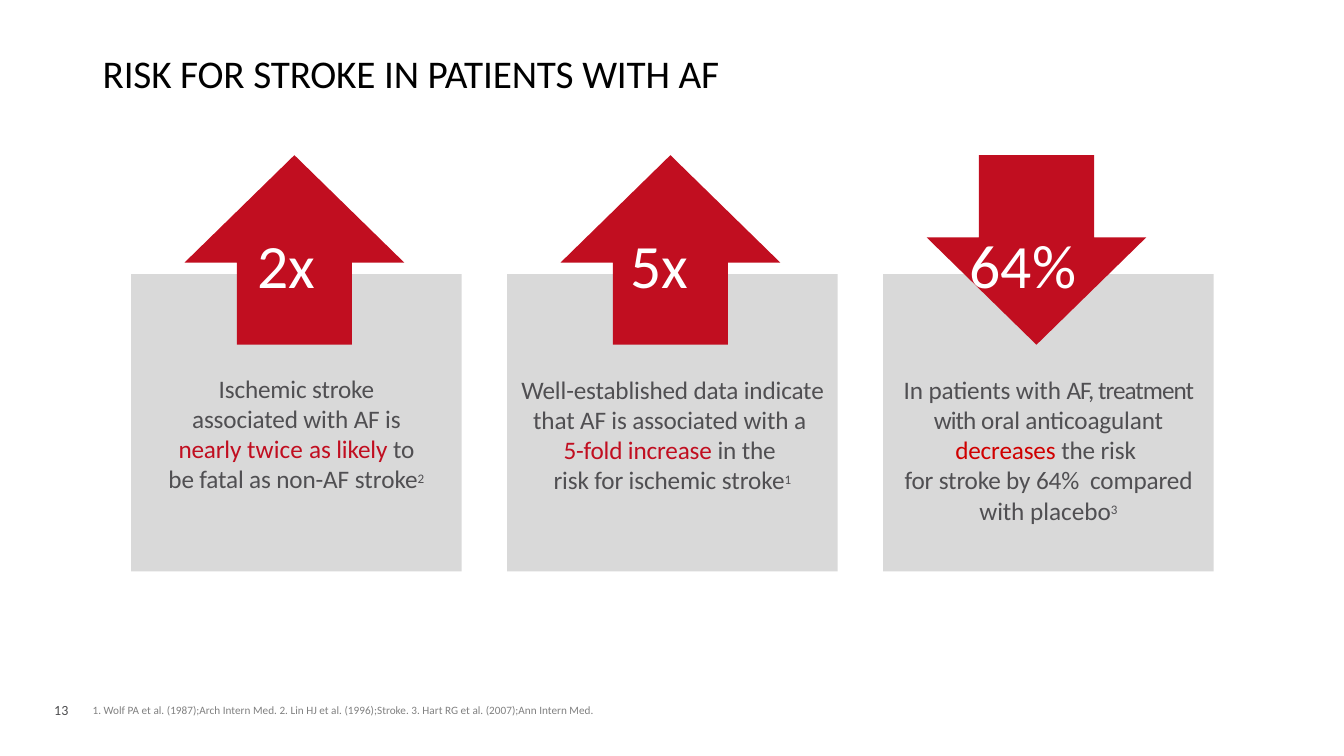
from pptx import Presentation
from pptx import util as u
from pptx.dml.color import RGBColor
from pptx.enum import shapes, text

WHITE = RGBColor(0xFF, 0xFF, 0xFF)
BLACK = RGBColor(0, 0, 0)
PANEL = RGBColor(0xD9, 0xD9, 0xD9)
RED = RGBColor(0xC1, 0x0E, 0x20)
BRIGHT_RED = RGBColor(0xD0, 0, 0)
BODY = RGBColor(0x50, 0x4F, 0x52)
NUMBER = RGBColor(0x4D, 0x4D, 0x4F)
NOTE = RGBColor(0x80, 0x80, 0x80)

# Horizontal rule of the three cards, in percent of the slide width
CARD_LEFT, CARD_PITCH, CARD_WIDTH = 9.75, 27.98, 24.6


def add_text(p, content, font="Calibri", size=18, color=BODY, spacing=0, raised=0):
    """Append text to a paragraph; a newline becomes a line break.

    Spacing is in points, raised in percent of the text size.
    """
    for i, line in enumerate(content.split("\n")):
        if i:
            p.add_line_break()
        if not line:
            continue
        r = p.add_run()
        r.text = line
        r.font.name = font
        r.font.size = u.Pt(size)
        r.font.color.rgb = color
        rPr = r._r.get_or_add_rPr()
        if spacing:
            rPr.set("spc", str(round(spacing * 100)))
        if raised:
            rPr.set("baseline", str(raised * 1000))


class Deck:
    """Holds the slide; every box is (left, top, width, height) in percent."""

    def __init__(self, width, height):
        self.prs = Presentation()
        self.prs.slide_width = u.Inches(width)
        self.prs.slide_height = u.Inches(height)
        self.slide = self.prs.slides.add_slide(self.prs.slide_layouts[6])

    def place(self, box):
        sizes = (self.prs.slide_width, self.prs.slide_height) * 2
        return [round(size * share / 100) for size, share in zip(sizes, box)]

    def shape(self, kind, box, fill):
        sp = self.slide.shapes.add_shape(kind, *self.place(box))
        sp.shadow.inherit = False
        sp.fill.solid()
        sp.fill.fore_color.rgb = fill
        sp.line.fill.background()
        return sp

    def textbox(self, box, runs, align=text.PP_ALIGN.LEFT, inset=True, wrap=True,
                anchor=text.MSO_ANCHOR.TOP, line_spacing=None):
        """Add a one-paragraph box; runs are (text, format) pairs."""
        tf = self.slide.shapes.add_textbox(*self.place(box)).text_frame
        tf.word_wrap = wrap
        tf.vertical_anchor = anchor
        if not inset:
            tf.margin_left = tf.margin_top = tf.margin_right = tf.margin_bottom = 0
        p = tf.paragraphs[0]
        p.alignment = align
        if line_spacing:
            p.line_spacing = line_spacing
        for content, fmt in runs:
            add_text(p, content, **fmt)

    def arrow(self, left, down):
        sp = self.shape(shapes.MSO_SHAPE.UP_ARROW, (left, 20.53, 16.35, 25.07), RED)
        sp.adjustments[0], sp.adjustments[1] = 0.524, 0.567
        sp.rotation = 180 if down else 0

    def card(self, column, figure, figure_shift, figure_width, arrow_shift, down,
             body_top, body_width, body):
        left = CARD_LEFT + column * CARD_PITCH
        self.shape(shapes.MSO_SHAPE.RECTANGLE, (left, 36.27, CARD_WIDTH, 39.33), PANEL)
        body_left = left + (CARD_WIDTH - body_width) / 2
        self.textbox((body_left, body_top, body_width, 20.13), body,
                     align=text.PP_ALIGN.CENTER, inset=False)
        self.arrow(left + arrow_shift, down)
        self.textbox((left + figure_shift, 30, figure_width, 9.87),
                     [(figure, dict(size=44, color=WHITE))], inset=False)


TIGHT = dict(spacing=-0.1)
TIGHT_RED = dict(color=RED, spacing=-0.1)
REFERENCE = dict(size=16, raised=26)

CARDS = [
    dict(figure="2x", figure_shift=9.38, figure_width=6.3, arrow_shift=3.98, down=False,
         body_top=49.33, body_width=19.58, body=[
             ("Ischemic stroke associated with AF is ", TIGHT),
             ("nearly ", TIGHT_RED),
             ("twice ", dict(color=RED, spacing=0.1)),
             ("as likely ", TIGHT_RED),
             ("to be fatal as non-AF ", TIGHT),
             ("stroke", {}),
             ("2", REFERENCE)]),
    dict(figure="5x", figure_shift=9.15, figure_width=6.3, arrow_shift=3.98, down=False,
         body_top=49.47, body_width=24.38, body=[
             ("Well-established data indicate that AF is associated with a \n", TIGHT),
             ("5-fold increase ", TIGHT_RED),
             ("in the \nrisk for ischemic ", TIGHT),
             ("stroke", {}),
             ("1", REFERENCE)]),
    dict(figure="64%", figure_shift=6.45, figure_width=11.78, arrow_shift=3.23, down=True,
         body_top=49.47, body_width=22.43, body=[
             ("In patients with ", TIGHT),
             ("AF, treatment with ", dict(spacing=-0.7)),
             ("oral anticoagulant ", TIGHT),
             ("decreases ", dict(color=BRIGHT_RED, spacing=-0.1)),
             ("the risk \nfor stroke by 64%  compared with ", TIGHT),
             ("placebo", {}),
             ("3", REFERENCE)]),
]


def main():
    deck = Deck(13.33, 7.5)
    deck.textbox((6.9, 5.33, 86.27, 8.13),
                 [("RISK FOR STROKE IN PATIENTS WITH AF",
                   dict(size=28, color=BLACK, spacing=-0.1))],
                 anchor=text.MSO_ANCHOR.BOTTOM, line_spacing=0.9)
    for column, card in enumerate(CARDS):
        deck.card(column, **card)
    deck.textbox((3.3, 92.13, 2.93, 3.6), [("13", dict(size=10, color=NUMBER))], wrap=False)
    deck.textbox((6.9, 93.07, 70.37, 1.73),
                 [("1. Wolf PA et al. (1987);Arch Intern Med. 2. Lin HJ et al. (1996);Stroke. "
                   "3. Hart RG et al. (2007);Ann Intern Med.", dict(size=8, color=NOTE))],
                 inset=False)
    deck.prs.save("out.pptx")


if __name__ == "__main__":
    main()
